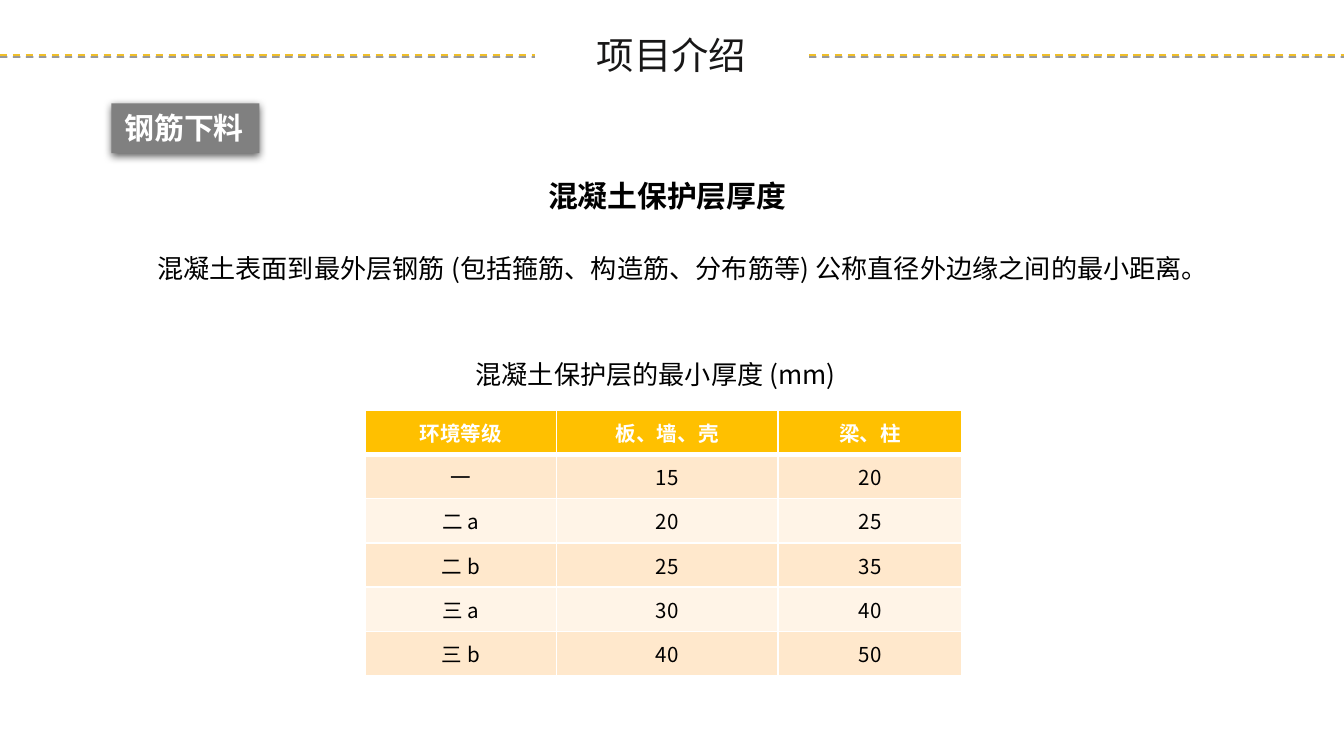
from lxml import etree
from pptx import Presentation
from pptx.dml.color import RGBColor
from pptx.enum.dml import MSO_LINE
from pptx.enum.shapes import MSO_CONNECTOR, MSO_SHAPE
from pptx.enum.text import MSO_ANCHOR, MSO_AUTO_SIZE, PP_ALIGN
from pptx.oxml import parse_xml
from pptx.oxml.ns import nsdecls, qn
from pptx.util import Inches, Pt

FONT = "Noto Sans CJK SC"
SLIDE_WIDTH = 10
SLIDE_HEIGHT = SLIDE_WIDTH * 9 / 16
COLUMN_WIDTHS = [1.42, 1.65, 1.37]
COVER_ROWS = [
    ["环境等级", "板、墙、壳", "梁、柱"],
    ["一", "15", "20"],
    ["二 a", "20", "25"],
    ["二 b", "25", "35"],
    ["三 a", "30", "40"],
    ["三 b", "40", "50"],
]


def color(value):
    return RGBColor.from_string(value)


def set_attributes(target, values):
    for name, value in values.items():
        setattr(target, name, value)


def place(shape, box):
    names = ("left", "top", "width", "height")
    set_attributes(shape, dict(zip(names, map(Inches, box))))


def write(text_frame, text, size, ink, bold=False, align=PP_ALIGN.LEFT, spacing=1.0):
    text_frame.text = text
    paragraph = text_frame.paragraphs[0]
    set_attributes(paragraph, {"alignment": align, "line_spacing": spacing})
    # Keep closing punctuation inside the text area
    paragraph._p.get_or_add_pPr().set("hangingPunct", "0")
    font = paragraph.runs[0].font
    set_attributes(font, {"name": FONT, "size": Pt(size), "bold": bold})
    font.color.rgb = color(ink)
    latin = paragraph.runs[0]._r.rPr.find(qn("a:latin"))
    east_asian = etree.Element(qn("a:ea"), typeface=FONT)
    latin.addnext(east_asian)


def fit(text_frame, anchor, wrap=True, right=0.1):
    set_attributes(text_frame, {
        "word_wrap": wrap,
        "auto_size": MSO_AUTO_SIZE.SHAPE_TO_FIT_TEXT,
        "vertical_anchor": anchor,
        "margin_left": Inches(0.1), "margin_right": Inches(right),
        "margin_top": Inches(0.05), "margin_bottom": Inches(0.05),
    })


def add_shadow(shape, alpha, blur, distance):
    properties = shape._element.spPr
    for effects in properties.findall(qn("a:effectLst")):
        properties.remove(effects)
    properties.append(parse_xml(
        f'<a:effectLst {nsdecls("a")}><a:outerShdw blurRad="{Pt(blur)}" '
        f'dist="{Pt(distance)}" dir="5400000" algn="t" rotWithShape="0">'
        f'<a:srgbClr val="000000"><a:alpha val="{alpha * 1000}"/></a:srgbClr>'
        '</a:outerShdw></a:effectLst>'))


def add_header(slide, box):
    """Title between two dashed rules of equal length."""
    left, top, width, _ = box
    rule_y, rule_length = top + 0.41, 3.98
    for start in (left, left + width - rule_length):
        rule = slide.shapes.add_connector(
            MSO_CONNECTOR.STRAIGHT, Inches(start), Inches(rule_y),
            Inches(start + rule_length), Inches(rule_y))
        rule.line.color.rgb = color("F0BF29")
        set_attributes(rule.line, {"width": Pt(1), "dash_style": MSO_LINE.DASH})
        add_shadow(rule, 40, 0, 1)

    title = slide.shapes.title
    place(title, (left + 4.34, top + 0.19, 1.31, 0.44))
    write(title.text_frame, "项目介绍", 20, "181717")
    fit(title.text_frame, MSO_ANCHOR.TOP, wrap=False, right=0)


def add_tag(slide, box):
    """Grey section tag."""
    tag = slide.shapes.add_shape(MSO_SHAPE.RECTANGLE, *map(Inches, box))
    tag.fill.solid()
    tag.fill.fore_color.rgb = color("808080")
    tag.line.fill.background()
    add_shadow(tag, 63, 4.5, 1.5)
    write(tag.text_frame, "钢筋下料", 16, "FFFFFF", bold=True)
    fit(tag.text_frame, MSO_ANCHOR.TOP)


def add_text(slide, box, text, size, bold=False):
    text_box = slide.shapes.add_textbox(*map(Inches, box))
    write(text_box.text_frame, text, size, "000000", bold, spacing=1.5)
    fit(text_box.text_frame, MSO_ANCHOR.MIDDLE)


def add_definition(slide, box):
    """Heading, definition and table caption."""
    left, top, width, _ = box
    add_text(slide, (left + 2.91, top, 2.05, 0.46), "混凝土保护层厚度", 16, bold=True)
    add_text(slide, (left, top + 0.55, width, 0.45),
             "混凝土表面到最外层钢筋 (包括箍筋、构造筋、分布筋等) 公称直径外边缘之间的最小距离。", 14)
    add_text(slide, (left + 2.37, top + 1.36, 3.06, 0.41),
             "混凝土保护层的最小厚度 (mm)", 14)


def set_borders(cell, widths):
    properties = cell._tc.get_or_add_tcPr()
    for index, (side, width) in enumerate(widths.items()):
        properties.insert(index, parse_xml(
            f'<a:ln{side} {nsdecls("a")} w="{Pt(width)}"><a:solidFill>'
            f'<a:srgbClr val="FFFFFF"/></a:solidFill></a:ln{side}>'))


def add_cover_table(slide, box):
    """Minimum cover by environment class."""
    table = slide.shapes.add_table(
        len(COVER_ROWS), len(COLUMN_WIDTHS), *map(Inches, box)).table
    for column, width in zip(table.columns, COLUMN_WIDTHS):
        column.width = Inches(width)
    for row_index, values in enumerate(COVER_ROWS):
        table.rows[row_index].height = Inches(box[3] / len(COVER_ROWS))
        is_header = row_index == 0
        fill = "FFC000" if is_header else ("FFF4E7", "FFE8CC")[row_index % 2]
        borders = {"L": 1, "R": 1, "T": 3 if row_index == 1 else 1,
                   "B": 3 if is_header else 1}
        for column_index, value in enumerate(values):
            cell = table.cell(row_index, column_index)
            set_attributes(cell, {
                "vertical_anchor": MSO_ANCHOR.MIDDLE, "margin_left": 0,
                "margin_right": 0, "margin_top": 0, "margin_bottom": 0})
            cell.fill.solid()
            cell.fill.fore_color.rgb = color(fill)
            set_borders(cell, borders)
            write(cell.text_frame, value, 11, "FFFFFF" if is_header else "000000",
                  bold=is_header, align=PP_ALIGN.CENTER)


def main():
    presentation = Presentation()
    presentation.slide_width = Inches(SLIDE_WIDTH)
    presentation.slide_height = Inches(SLIDE_HEIGHT)
    slide = presentation.slides.add_slide(presentation.slide_layouts[5])
    add_header(slide, (0, 0, SLIDE_WIDTH, 0.7))
    add_tag(slide, (0.83, 0.77, 1.1, 0.37))
    add_definition(slide, (1.07, 1.16, 8.11, 1.77))
    add_cover_table(slide, (2.72, 3.05, sum(COLUMN_WIDTHS), 1.98))
    presentation.save("out.pptx")


if __name__ == "__main__":
    main()
